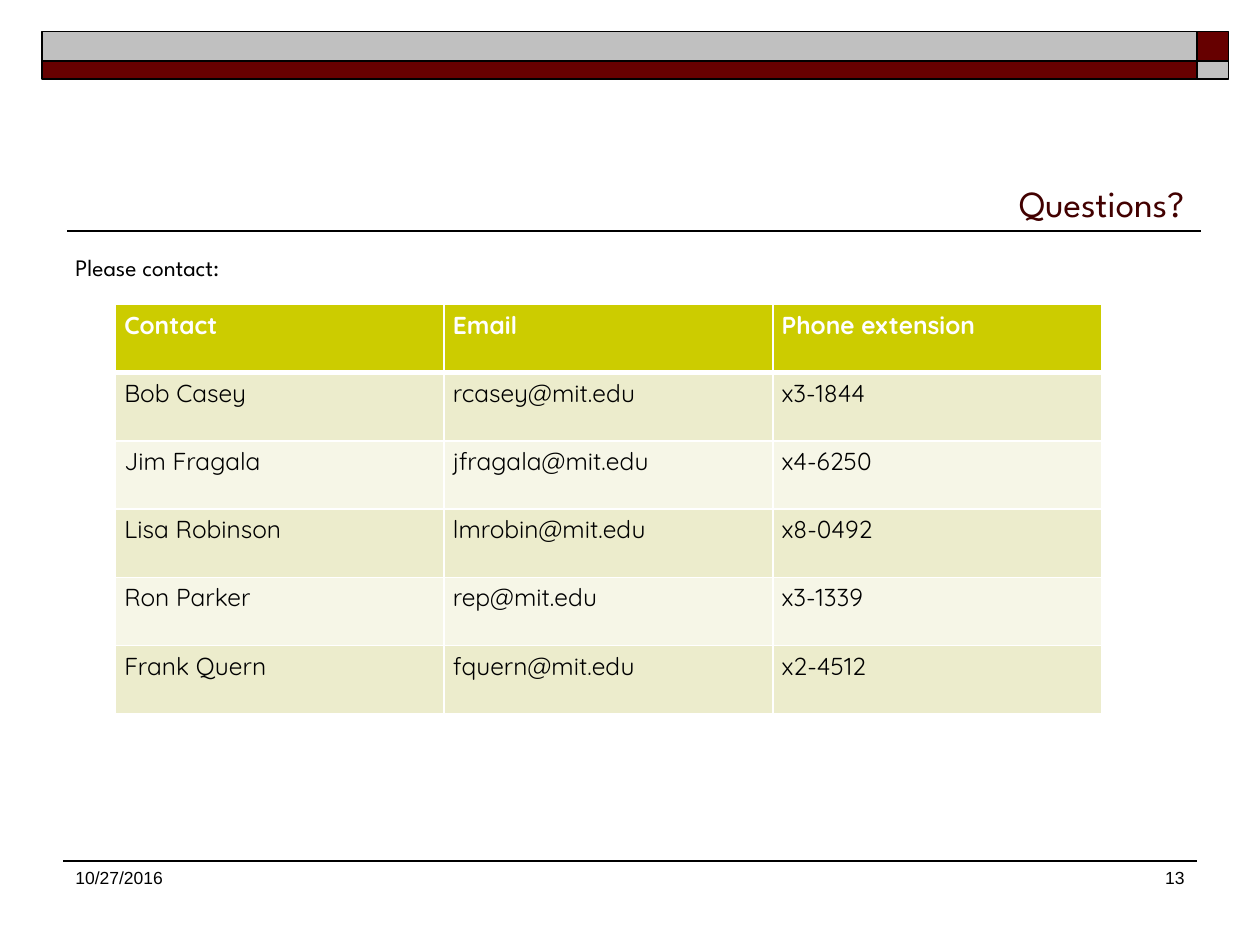
from lxml import etree
from pptx import Presentation
from pptx import util as u
from pptx.dml.color import RGBColor
from pptx.enum import shapes, text
from pptx.oxml.ns import qn

PX = 7620  # 120 px to the inch

BLACK = RGBColor(0x00, 0x00, 0x00)
WHITE = RGBColor(0xFF, 0xFF, 0xFF)
MAROON = RGBColor(0x66, 0x00, 0x00)
WINE = RGBColor(0x42, 0x00, 0x00)
SILVER = RGBColor(0xC0, 0xC0, 0xC0)
LIME = RGBColor(0xCC, 0xCC, 0x00)
CREAM = RGBColor(0xEC, 0xEC, 0xCC)
IVORY = RGBColor(0xF6, 0xF6, 0xE7)

HEAD = "League Spartan"
LEFT = text.PP_ALIGN.LEFT
RIGHT = text.PP_ALIGN.RIGHT

ROWS = [
    ("Contact", "Email", "Phone extension"),
    ("Bob Casey", "rcasey@mit.edu", "x3-1844"),
    ("Jim Fragala", "jfragala@mit.edu", "x4-6250"),
    ("Lisa Robinson", "lmrobin@mit.edu", "x8-0492"),
    ("Ron Parker", "rep@mit.edu", "x3-1339"),
    ("Frank Quern", "fquern@mit.edu", "x2-4512"),
]


def emu(*px):
    return [u.Emu(n * PX) for n in px]


def style(frame, words, size, face, color, align=LEFT, bold=False):
    """Set the one paragraph of a text frame and return it."""
    frame.text = words
    para = frame.paragraphs[0]
    para.alignment = align
    font = para.runs[0].font
    font.size, font.name, font.bold = u.Pt(size), face, bold
    font.color.rgb = color
    return para


def label(slide, box, *look):
    frame = slide.shapes.add_textbox(*emu(*box)).text_frame
    frame.word_wrap = True
    return style(frame, *look)


def rule(slide, x, y, wide, weight):
    line = slide.shapes.add_connector(
        shapes.MSO_CONNECTOR.STRAIGHT, *emu(x, y, x + wide, y))
    line.line.color.rgb = BLACK
    line.line.width = u.Pt(weight)
    etree.SubElement(line._element.spPr, qn("a:effectLst"))


def banner(slide, x, y, wide, high):
    """Two stacked bars whose colours swap in the end blocks."""
    end, top = 30, 28
    main = wide - end
    for dy, tall, bar, block in ((0, top, SILVER, MAROON),
                                 (top, high - top, MAROON, SILVER)):
        for dx, span, color in ((0, main, bar), (main, end, block)):
            rect = slide.shapes.add_shape(
                shapes.MSO_SHAPE.RECTANGLE, *emu(x + dx, y + dy, span, tall))
            rect.shadow.inherit = False
            rect.fill.solid()
            rect.fill.fore_color.rgb = color
            rect.line.color.rgb = BLACK
            rect.line.width = u.Pt(1)


def heading(slide, x, y, wide, high):
    title = slide.shapes.title
    title.left, title.top, title.width, title.height = emu(x, y, wide, high)
    frame = title.text_frame
    frame.auto_size = text.MSO_AUTO_SIZE.NONE
    frame.vertical_anchor = text.MSO_ANCHOR.BOTTOM
    style(frame, "Questions?", 21, HEAD, WINE, RIGHT)
    rule(slide, x + 4, y + high, wide, 1)


def border(cell, low):
    """White cell edges; low is the weight of the bottom one."""
    props = cell._tc.get_or_add_tcPr()
    for spot, (tag, weight) in enumerate(
            (("lnL", 1), ("lnR", 1), ("lnT", 1), ("lnB", low))):
        edge = etree.Element(qn(f"a:{tag}"), w=str(u.Pt(weight)))
        fill = etree.SubElement(edge, qn("a:solidFill"))
        etree.SubElement(fill, qn("a:srgbClr"), val=str(WHITE))
        props.insert(spot, edge)


def contacts(slide, x, y, wide, high):
    table = slide.shapes.add_table(
        len(ROWS), len(ROWS[0]), *emu(x, y, wide, high)).table
    for r, row in enumerate(ROWS):
        table.rows[r].height = u.Emu(high * PX // len(ROWS))
        first = r == 0
        back = LIME if first else CREAM if r % 2 else IVORY
        for c, words in enumerate(row):
            cell = table.cell(r, c)
            cell.margin_left = cell.margin_right = u.Inches(0.07)
            cell.margin_top = cell.margin_bottom = u.Inches(0.04)
            cell.fill.solid()
            cell.fill.fore_color.rgb = back
            style(cell.text_frame, words, 14, "Quicksand",
                  WHITE if first else BLACK, LEFT, first)
            border(cell, 3 if first else 1)


def footer(slide, x, y, wide, high):
    rule(slide, x, y, wide, 0.75)
    label(slide, (x, y, 220, high), "10/27/2016", 10, "Arial", BLACK)
    label(slide, (x + wide - 250, y, 250, high), "13", 10, "Arial", BLACK, RIGHT)


def main():
    deck = Presentation()
    deck.slide_width, deck.slide_height = emu(1200, 900)
    slide = deck.slides.add_slide(deck.slide_layouts[5])
    banner(slide, 40, 30, 1130, 45)
    heading(slide, 60, 70, 1080, 150)
    intro = label(slide, (60, 240, 1080, 40), "Please contact:", 13.5, HEAD, BLACK)
    intro.line_spacing = 0.8
    contacts(slide, 110, 290, 939, 390)
    footer(slide, 60, 820, 1080, 60)
    deck.save("out.pptx")


if __name__ == "__main__":
    main()
